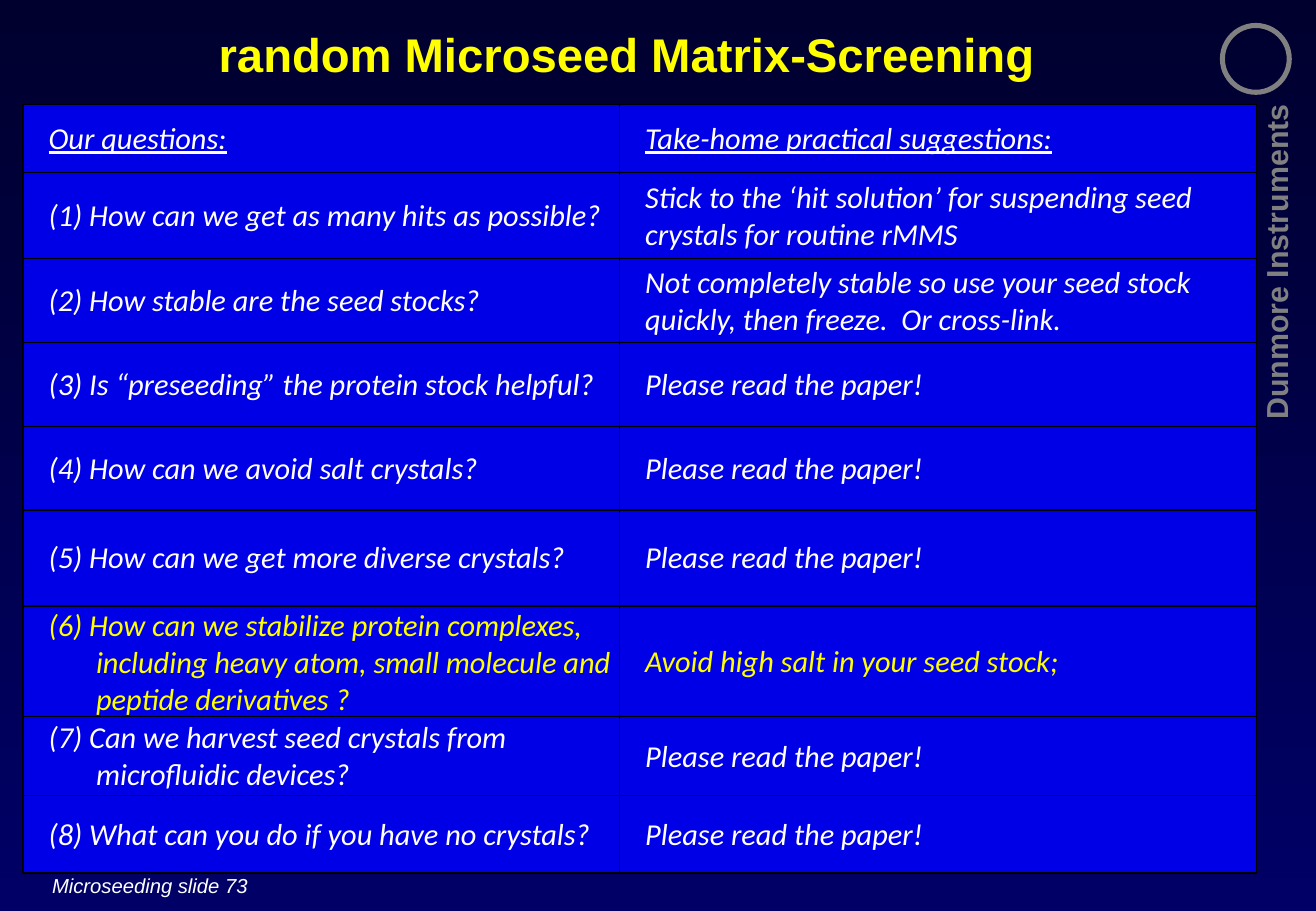
from lxml import etree
from pptx import Presentation
from pptx import util as u
from pptx.dml.color import RGBColor
from pptx.enum import shapes, text
from pptx.oxml.ns import qn

YELLOW = RGBColor(0xFF, 0xFF, 0x00)
WHITE = RGBColor(0xFF, 0xFF, 0xFF)
GREY = RGBColor(0x80, 0x80, 0x80)
BLACK = RGBColor(0x00, 0x00, 0x00)
CELL_BLUE = RGBColor(0x00, 0x00, 0xE6)
NIGHT = RGBColor(0x00, 0x00, 0x2F)
NAVY = RGBColor(0x00, 0x00, 0x66)

GRID_COLUMNS, GRID_ROWS = 108.3, 75
READ_PAPER = "Please read the paper!"
QUESTIONS = [
    (5.6, "Our questions:", "Take-home practical suggestions:", {"underline": True}),
    (7.1, "(1) How can we get as many hits as possible?",
     "Stick to the ‘hit solution’ for suspending seed crystals for routine rMMS", {}),
    (6.9, "(2) How stable are the seed stocks?",
     "Not completely stable so use your seed stock quickly, then freeze.  Or cross-link.", {}),
    (6.9, "(3) Is “preseeding” the protein stock helpful?", READ_PAPER, {}),
    (6.9, "(4) How can we avoid salt crystals?", READ_PAPER, {}),
    (7.9, "(5) How can we get more diverse crystals?", READ_PAPER, {}),
    (8.6, "(6) How can we stabilize protein complexes, including heavy atom, "
          "small molecule and peptide derivatives ?",
     "Avoid high salt in your seed stock;", {"color": YELLOW}),
    (6.5, "(7) Can we harvest seed crystals from microfluidic devices?", READ_PAPER, {}),
    (6.4, "(8) What can you do if you have no crystals?", READ_PAPER, {}),
]


class SlideBuilder:
    cell_style = {"name": "Calibri", "size": u.Pt(18), "italic": True, "color": WHITE}
    cell_format = {"margin_left": 0.1, "margin_right": 0.1, "margin_top": 0.1, "margin_bottom": 0}
    indents = [(5.9, -3.9), (2, 0)]

    def __init__(self, deck):
        self.column = deck.slide_width / GRID_COLUMNS
        self.row = deck.slide_height / GRID_ROWS
        self.page = deck.slides.add_slide(deck.slide_layouts[5])

    def across(self, columns):
        return u.Emu(round(columns * self.column))

    def down(self, rows):
        return u.Emu(round(rows * self.row))

    def place(self, left, top, width, height):
        return self.across(left), self.down(top), self.across(width), self.down(height)

    def background(self, top, bottom):
        fill = self.page.background.fill
        fill.gradient()
        fill.gradient_angle = 270
        for stop, color in zip(fill.gradient_stops, (top, bottom)):
            stop.color.rgb = color

    def add_span(self, para, words, style):
        span = para.add_run()
        span.text = words
        for key, value in style.items():
            if key == "color":
                span.font.color.rgb = value
            else:
                setattr(span.font, key, value)

    def fill_frame(self, box, words, style, align, **frame_format):
        for key, value in frame_format.items():
            setattr(box.text_frame, key, value)
        para = box.text_frame.paragraphs[0]
        para.alignment = align
        self.add_span(para, words, style)

    def title(self, area, words, style):
        box = self.page.shapes.title
        box.left, box.top, box.width, box.height = self.place(*area)
        self.fill_frame(box, words, style, text.PP_ALIGN.CENTER, word_wrap=True,
                        auto_size=text.MSO_AUTO_SIZE.NONE,
                        vertical_anchor=text.MSO_ANCHOR.TOP)

    def label(self, area, words, style, align=text.PP_ALIGN.LEFT, rotation=0, **frame_format):
        box = self.page.shapes.add_textbox(*self.place(*area))
        box.rotation = rotation
        self.fill_frame(box, words, style, align, **frame_format)

    def ring(self, area, color, weight):
        ring = self.page.shapes.add_shape(shapes.MSO_SHAPE.OVAL, *self.place(*area))
        ring.shadow.inherit = False
        ring.fill.background()
        ring.line.color.rgb = color
        ring.line.width = u.Pt(weight)

    def border(self, cell, color, weight):
        properties = cell._tc.get_or_add_tcPr()
        for side in ("lnL", "lnR", "lnT", "lnB"):
            line = etree.SubElement(properties, qn("a:" + side), w=str(u.Pt(weight)))
            solid = etree.SubElement(line, qn("a:solidFill"))
            etree.SubElement(solid, qn("a:srgbClr"), val=str(color))

    def cell(self, cell, words, style, indent):
        self.border(cell, BLACK, 1)
        cell.fill.solid()
        cell.fill.fore_color.rgb = CELL_BLUE
        cell.vertical_anchor = text.MSO_ANCHOR.MIDDLE
        for key, value in self.cell_format.items():
            setattr(cell, key, self.across(value))
        para = cell.text_frame.paragraphs[0]
        properties = para._p.get_or_add_pPr()
        for key, value in zip(("marL", "indent"), indent):
            properties.set(key, str(self.across(value)))
        self.add_span(para, words, self.cell_style | style)

    def table(self, left, top, widths, entries):
        height = sum(entry[0] for entry in entries)
        area = self.place(left, top, sum(widths), height)
        table = self.page.shapes.add_table(len(entries), len(widths), *area).table
        table.first_row = table.horz_banding = False
        for column, width in zip(table.columns, widths):
            column.width = self.across(width)
        for row, (height, question, suggestion, style) in zip(table.rows, entries):
            row.height = self.down(height)
            for cell, words, indent in zip(row.cells, (question, suggestion), self.indents):
                self.cell(cell, words, style, indent)


def main():
    deck = Presentation()
    deck.slide_width, deck.slide_height = u.Inches(10.83), u.Inches(7.5)
    builder = SlideBuilder(deck)
    builder.background(NIGHT, NAVY)
    builder.label((90, 20.6, 30, 4), "Dunmore Instruments",
                  {"name": "Arial", "size": u.Pt(18), "bold": True, "color": GREY},
                  text.PP_ALIGN.RIGHT, 270, word_wrap=True,
                  vertical_anchor=text.MSO_ANCHOR.MIDDLE)
    builder.label((3.3, 71.4, 18.2, 3), "Microseeding slide 73",
                  {"name": "Arial", "size": u.Pt(12), "italic": True, "color": WHITE},
                  word_wrap=False)
    builder.ring((100.6, 2.1, 5.5, 5.5), GREY, 3)
    builder.title((-2.6, 1.6, 108.3, 5.7), "random Microseed Matrix-Screening",
                  {"name": "Arial", "size": u.Pt(28), "bold": True, "color": YELLOW})
    builder.table(1.9, 8.6, (49.1, 52.4), QUESTIONS)
    deck.save("out.pptx")


if __name__ == "__main__":
    main()
